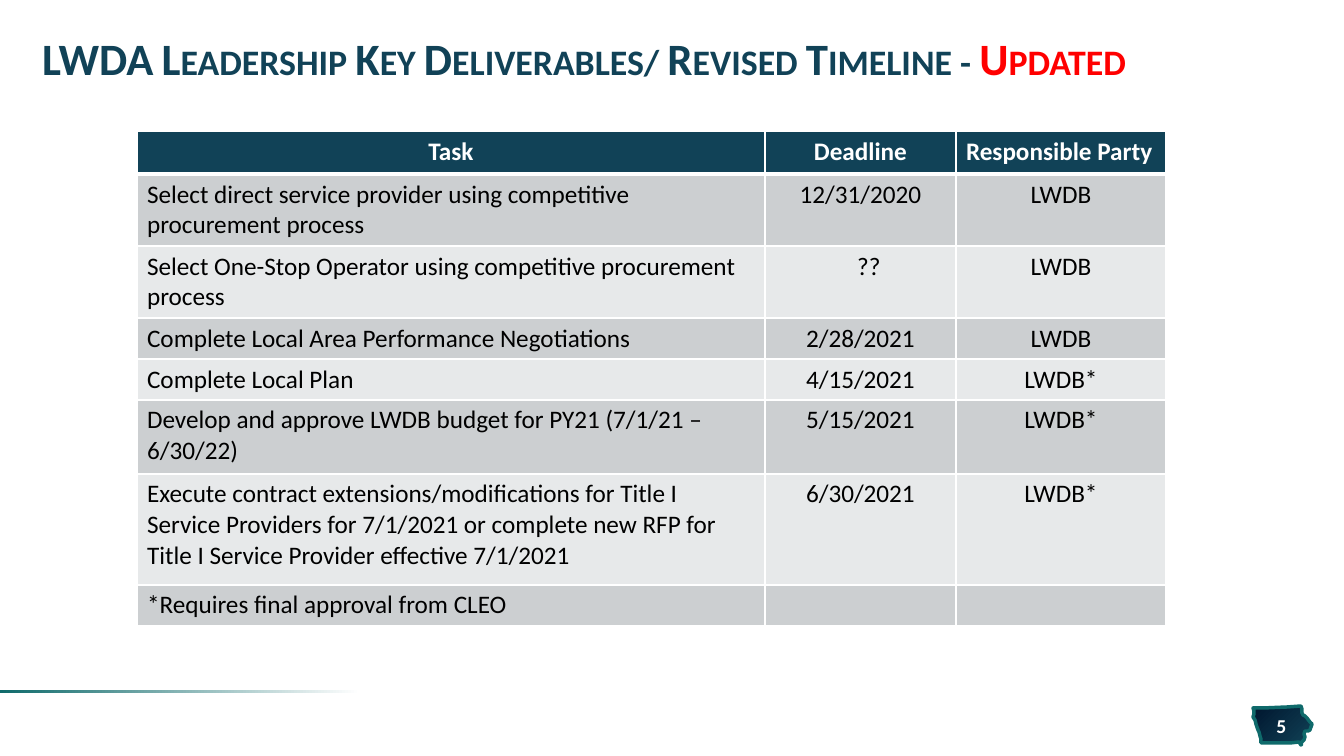
from dataclasses import dataclass

from lxml import etree
from pptx import Presentation
from pptx import util as u
from pptx.dml.color import RGBColor
from pptx.enum import shapes, text
from pptx.oxml import ns

PX = 914400 / 100.8  # EMU in one px
LEFT, CENTER = text.PP_ALIGN.LEFT, text.PP_ALIGN.CENTER


@dataclass(frozen=True)
class Theme:
    font: str = "Calibri"
    navy: str = "114257"
    midnight: str = "00162E"
    teal: str = "0F6A6B"
    red: str = "FF0000"
    white: str = "FFFFFF"
    black: str = "000000"
    band_dark: str = "CCCFD1"
    band_light: str = "E7E9EA"
    title_size: int = 32
    table_size: int = 18
    number_size: int = 14


THEME = Theme()

HEADINGS = ("Task", "Deadline", "Responsible Party")
TASKS = (
    ("Select direct service provider using competitive procurement process", "12/31/2020", "LWDB"),
    ("Select One-Stop Operator using competitive procurement process", "??", "LWDB"),
    ("Complete Local Area Performance Negotiations", "2/28/2021", "LWDB"),
    ("Complete Local Plan", "4/15/2021", "LWDB*"),
    ("Develop and approve LWDB budget for PY21 (7/1/21 – 6/30/22)", "5/15/2021", "LWDB*"),
    ("Execute contract extensions/modifications for Title I Service Providers for 7/1/2021 "
     "or complete new RFP for Title I Service Provider effective 7/1/2021", "6/30/2021", "LWDB*"),
    ("*Requires final approval from CLEO", "", ""),
)
COLUMN_WIDTHS = (628, 191, 210)
ROW_HEIGHTS = (43, 72, 72, 41, 41, 74, 111, 41)

# State outline, in px from the corner of its box
STATE = (
    (48, 0), (34, 1), (10, 2), (0, 2), (1, 5), (1, 8), (0, 11), (2, 14), (3, 18),
    (4, 21), (5, 24), (6, 26), (7, 30), (8, 33), (8, 37), (37, 37), (46, 36),
    (48, 39), (49, 38), (48, 37), (51, 34), (52, 31), (51, 28), (52, 25),
    (55, 25), (57, 24), (59, 18), (57, 16), (54, 12), (52, 10), (50, 9),
    (49, 7), (49, 3),
)


def px(length):
    return u.Emu(round(length * PX))


def rgb(code):
    return RGBColor.from_string(code)


def add_text(paragraph, words, *, size, color, bold=False, align=None,
             small_caps=False, spacing=None):
    if align is not None:
        paragraph.alignment = align
    run = paragraph.add_run()
    run.text = words
    font = run.font
    font.name, font.size, font.bold = THEME.font, u.Pt(size), bold
    font.color.rgb = rgb(color)
    properties = run._r.get_or_add_rPr()
    if small_caps:
        properties.set("cap", "small")
    if spacing is not None:
        properties.set("spc", str(round(spacing * 100)))


def fill_gradient(shape, angle, *stops):
    shape.shadow.inherit = False
    shape.fill.gradient()
    shape.fill.gradient_angle = angle
    for stop, (position, color) in zip(shape.fill.gradient_stops, stops):
        stop.position, stop.color.rgb = position, rgb(color)


def set_borders(cell, **widths):
    properties = cell._tc.get_or_add_tcPr()
    for place, side in enumerate(("lnL", "lnR", "lnT", "lnB")):
        line = etree.Element(ns.qn(f"a:{side}"), w=str(u.Pt(widths.get(side, 1))))
        solid = etree.SubElement(line, ns.qn("a:solidFill"))
        etree.SubElement(solid, ns.qn("a:srgbClr"), val=THEME.white)
        properties.insert(place, line)


def add_title(slide, x, y, w, h):
    title = slide.shapes.title
    title.left, title.top, title.width, title.height = map(px, (x, y, w, h))
    frame = title.text_frame
    frame.word_wrap = True
    frame.vertical_anchor = text.MSO_ANCHOR.MIDDLE
    heading = frame.paragraphs[0]
    heading.line_spacing = 0.85
    for words, color in (
        ("LWDA Leadership Key Deliverables/ Revised Timeline - ", THEME.navy),
        ("Updated", THEME.red),
    ):
        add_text(heading, words, size=THEME.title_size, color=color, bold=True,
                 align=LEFT, small_caps=True)


def add_timeline(slide, x, y):
    rows = (HEADINGS, *TASKS)
    frame = slide.shapes.add_table(len(rows), len(HEADINGS), px(x), px(y),
                                   px(sum(COLUMN_WIDTHS)), px(sum(ROW_HEIGHTS)))
    timeline = frame.table
    for column, width in zip(timeline.columns, COLUMN_WIDTHS):
        column.width = px(width)
    for row, height in zip(timeline.rows, ROW_HEIGHTS):
        row.height = px(height)

    for r, row in enumerate(rows):
        header = r == 0
        band = THEME.band_dark if r % 2 else THEME.band_light
        for c, words in enumerate(row):
            cell = timeline.cell(r, c)
            cell.fill.solid()
            cell.fill.fore_color.rgb = rgb(THEME.navy if header else band)
            set_borders(cell, lnB=3 if header else 1)
            if words == "??":
                cell.margin_left = px(27)
            if words:
                centred = c != 2 if header else c > 0
                add_text(cell.text_frame.paragraphs[0], words,
                         size=THEME.table_size, bold=header,
                         color=THEME.white if header else THEME.black,
                         align=CENTER if centred else LEFT)


def add_footer(slide, x, y, w, h):
    # Fading rule
    rule = slide.shapes.add_shape(shapes.MSO_SHAPE.RECTANGLE,
                                  px(x), px(y), px(383), px(3))
    fill_gradient(rule, 180, (0.06, THEME.white), (1, THEME.teal))
    rule.line.fill.background()

    # State badge
    badge_x, badge_y = x + w - 91, y + h - 50
    builder = slide.shapes.build_freeform(*STATE[0], scale=PX)
    builder.add_line_segments(STATE[1:], close=True)
    badge = builder.convert_to_shape(px(badge_x), px(badge_y))
    fill_gradient(badge, 315, (0, THEME.midnight), (1, THEME.navy))
    badge.line.color.rgb = rgb(THEME.teal)
    badge.line.width = u.Pt(2.5)

    # Slide number
    number = slide.shapes.add_textbox(px(badge_x + 3), px(badge_y + 8), px(51), px(23))
    frame = number.text_frame
    frame.word_wrap = True
    frame.margin_left = frame.margin_right = 0
    frame.vertical_anchor = text.MSO_ANCHOR.MIDDLE
    add_text(frame.paragraphs[0], "5", size=THEME.number_size, color=THEME.white,
             bold=True, align=CENTER, spacing=0.5)


def main():
    deck = Presentation()
    deck.slide_width, deck.slide_height = px(1344), px(756)
    slide = deck.slides.add_slide(deck.slide_layouts.get_by_name("Title Only"))
    add_footer(slide, 0, 690, 1344, 66)
    add_title(slide, 32, 24, 1279, 76)
    add_timeline(slide, 137, 131)
    deck.save("out.pptx")


if __name__ == "__main__":
    main()
